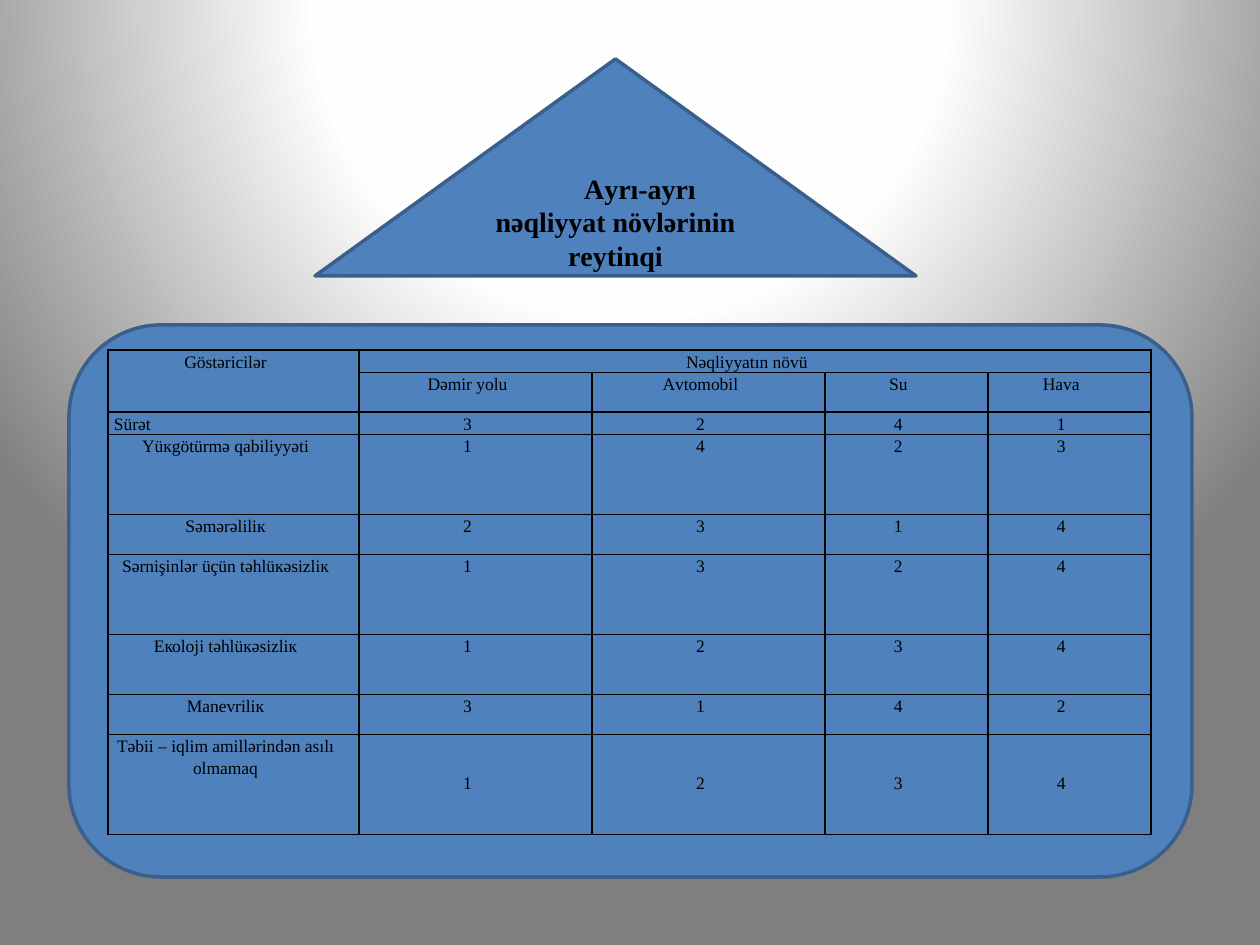
from lxml import etree
from pptx import Presentation
from pptx.dml.color import RGBColor
from pptx.enum.shapes import MSO_SHAPE
from pptx.enum.text import MSO_ANCHOR, PP_ALIGN
from pptx.oxml import parse_xml
from pptx.oxml.ns import nsdecls
from pptx.util import Emu, Pt

TRIANGLE = MSO_SHAPE.ISOSCELES_TRIANGLE
ROUNDED = MSO_SHAPE.ROUNDED_RECTANGLE
CENTER, LEFT = PP_ALIGN.CENTER, PP_ALIGN.LEFT
MIDDLE, TOP = MSO_ANCHOR.MIDDLE, MSO_ANCHOR.TOP
BLUE = RGBColor(0x4F, 0x81, 0xBD)
DARK_BLUE = RGBColor(0x3A, 0x5F, 0x8C)
BLACK = RGBColor(0, 0, 0)
FONT = "Times New Roman"
SCALE = 914400 / 126


def px(n):
    return Emu(round(n * SCALE))


def write(tf, text, size=10, bold=False, align=CENTER, spacing=None, after=None):
    p = tf.paragraphs[0]
    p.alignment = align
    p.line_spacing = spacing
    p.space_after = after
    r = p.add_run()
    r.text = text
    r.font.name = FONT
    r.font.size = Pt(size)
    r.font.bold = bold
    r.font.color.rgb = BLACK
    return p


prs = Presentation()
prs.slide_width, prs.slide_height = px(1260), px(945)
s = prs.slides.add_slide(prs.slide_layouts[6])

stops = "".join(
    f'<a:gs pos="{pos * 1000}"><a:srgbClr val="{color}"/></a:gs>'
    for pos, color in [(0, "FFFFFF"), (40, "FEFEFE"), (100, "7F7F7F")]
)
s.element.cSld.insert(0, parse_xml(
    f'<p:bg {nsdecls("p", "a")}><p:bgPr><a:gradFill rotWithShape="1">'
    f'<a:gsLst>{stops}</a:gsLst><a:path path="circle">'
    '<a:fillToRect l="50000" t="-80000" r="50000" b="180000"/></a:path>'
    '</a:gradFill><a:effectLst/></p:bgPr></p:bg>'
))

shapes = []
for kind, x, y, w, h in [(TRIANGLE, 315, 59, 601, 217), (ROUNDED, 69, 325, 1123, 552)]:
    sp = s.shapes.add_shape(kind, px(x), px(y), px(w), px(h))
    sp.shadow.inherit = False
    sp.fill.solid()
    sp.fill.fore_color.rgb = BLUE
    sp.line.color.rgb = DARK_BLUE
    sp.line.width = Pt(2)
    shapes.append(sp)

tf = shapes[0].text_frame
tf.word_wrap = True
tf.vertical_anchor = MIDDLE
p = write(tf, "Аyrı-аyrı nəqliyyаt növlərinin rеytinqi", size=16, bold=True)
p._p.get_or_add_pPr().set("indent", str(px(49)))

rows = [
    ("Göstəricilər", "Nəqliyyаtın növü", "", "", ""),
    ("", "Dəmir yоlu", "Аvtоmоbil", "Su", "Hаvа"),
    ("Sürət", "3", "2", "4", "1"),
    ("Yüкgötürmə qаbiliyyəti", "1", "4", "2", "3"),
    ("Səmərəliliк", "2", "3", "1", "4"),
    ("Sərnişinlər üçün təhlüкəsizliк", "1", "3", "2", "4"),
    ("Екоlоji təhlüкəsizliк", "1", "2", "3", "4"),
    ("Mаnеvriliк", "3", "1", "4", "2"),
    ("Təbii – iqlim аmillərindən аsılı оlmаmаq", "1", "2", "3", "4"),
]
widths = [251, 233, 233, 163, 163]
heights = [20, 40, 20, 80, 40, 80, 60, 40, 100]

table = s.shapes.add_table(
    len(rows), len(widths), px(108), px(350), px(sum(widths)), px(sum(heights))
).table
table.first_row = False
table.horz_banding = False
for col, w in zip(table.columns, widths):
    col.width = px(w)
for row, h in zip(table.rows, heights):
    row.height = px(h)
table.cell(0, 0).merge(table.cell(1, 0))
table.cell(0, 1).merge(table.cell(0, 4))

last = len(rows) - 1
for i, row in enumerate(rows):
    for j, text in enumerate(row):
        cell = table.cell(i, j)
        cell.vertical_anchor = TOP
        cell.margin_left, cell.margin_right = px(6), px(22)
        cell.margin_top = px(37 if i == last and j else 0)
        cell.margin_bottom = 0
        tcPr = cell._tc.get_or_add_tcPr()
        for side in ("lnL", "lnR", "lnT", "lnB"):
            tcPr.append(etree.fromstring(
                f'<a:{side} {nsdecls("a")} w="{Pt(1)}"><a:solidFill>'
                f'<a:srgbClr val="{BLACK}"/></a:solidFill></a:{side}>'
            ))
        cell.fill.background()
        if text:
            write(cell.text_frame, text, align=LEFT if text == "Sürət" else CENTER,
                  spacing=1.15, after=Pt(10))

prs.save("out.pptx")
